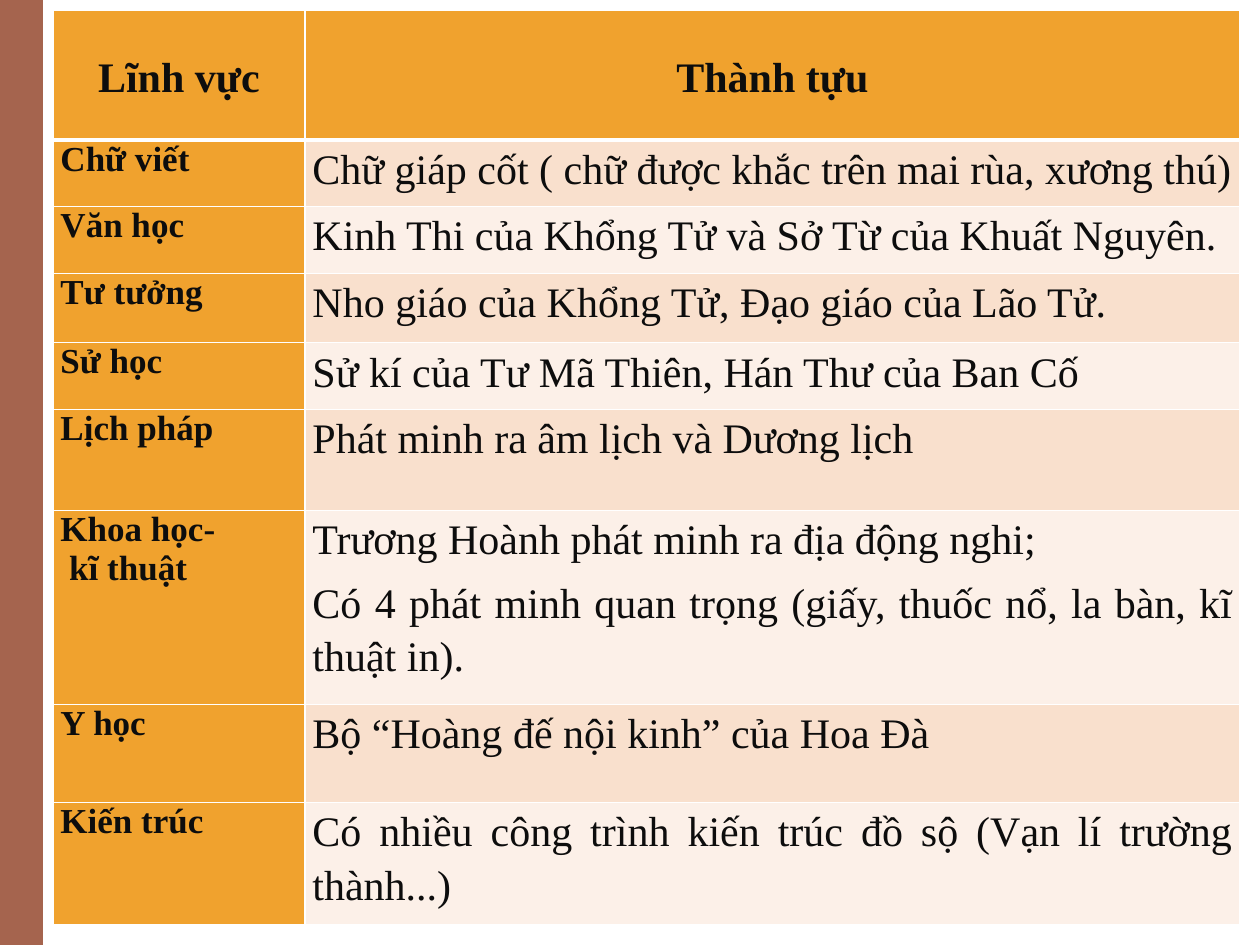
from dataclasses import dataclass

from lxml.etree import SubElement
from pptx import Presentation
from pptx.dml.color import RGBColor
from pptx.enum.shapes import MSO_SHAPE
from pptx.enum.text import MSO_ANCHOR, PP_ALIGN
from pptx.oxml.ns import qn
from pptx.util import Inches, Pt


@dataclass(frozen=True)
class Theme:
    """Colours, font and type sizes of the slide."""
    font: str = "Times New Roman"
    text: str = "0D0D0D"
    side: str = "A5644E"
    accent: str = "F0A22E"
    bands: tuple = ("F9E0CD", "FCF0E8")
    line: str = "FFFFFF"
    large: int = 24
    label: int = 20


THEME = Theme()
HEADER = ("Lĩnh vực", "Thành tựu")
FIELDS = [
    ("Chữ viết", "Chữ giáp cốt ( chữ được khắc trên mai rùa, xương thú)"),
    ("Văn học", "Kinh Thi của Khổng Tử và Sở Từ của Khuất Nguyên."),
    ("Tư tưởng", "Nho giáo của Khổng Tử, Đạo giáo của Lão Tử."),
    ("Sử học", "Sử kí của Tư Mã Thiên, Hán Thư của Ban Cố"),
    ("Lịch pháp", "Phát minh ra âm lịch và Dương lịch"),
    ("Khoa học-\n kĩ thuật",
     "Trương Hoành phát minh ra địa động nghi;\n"
     "Có 4 phát minh quan trọng (giấy, thuốc nổ, la bàn, kĩ thuật in)."),
    ("Y học", "Bộ “Hoàng đế nội kinh” của Hoa Đà"),
    ("Kiến trúc", "Có nhiều công trình kiến trúc đồ sộ (Vạn lí trường thành...)"),
]
COL_WIDTHS = (2, 7.42)
ROW_HEIGHTS = (1.03, 0.53, 0.53, 0.55, 0.53, 0.8, 1.54, 0.78, 0.97)


def add_side_bar(slide):
    """Draw the full-height bar at the left edge."""
    bar = slide.shapes.add_shape(MSO_SHAPE.RECTANGLE, 0, 0, Inches(0.34), Inches(7.5))
    bar.shadow.inherit = False
    bar.fill.solid()
    bar.fill.fore_color.rgb = RGBColor.from_string(THEME.side)
    bar.line.fill.background()


def set_borders(cell, top=1, bottom=1):
    """Give a cell solid borders, with widths in points."""
    tc_pr = cell._tc.get_or_add_tcPr()
    for side, width in (("L", 1), ("R", 1), ("T", top), ("B", bottom)):
        ln = SubElement(tc_pr, qn(f"a:ln{side}"), w=str(Pt(width)))
        fill = SubElement(ln, qn("a:solidFill"))
        SubElement(fill, qn("a:srgbClr"), val=THEME.line)


def format_cell(cell, text, fill, size, bold, align, spaced):
    """Fill a cell and set its text."""
    cell.fill.solid()
    cell.fill.fore_color.rgb = RGBColor.from_string(fill)
    cell.margin_left = cell.margin_right = Inches(0.06)
    cell.margin_top = cell.margin_bottom = 0
    cell.text_frame.text = text
    for p in cell.text_frame.paragraphs:
        p.alignment = align
        if spaced:
            p.line_spacing = 1.15
            p.space_after = Pt(6)
        for r in p.runs:
            r.font.name = THEME.font
            r.font.size = Pt(size)
            r.font.bold = bold
            r.font.color.rgb = RGBColor.from_string(THEME.text)


def add_header(table):
    """Write the header row."""
    for cell, text in zip(table.rows[0].cells, HEADER):
        set_borders(cell, bottom=3)
        format_cell(cell, text, THEME.accent, THEME.large, True, PP_ALIGN.CENTER, True)
        cell.vertical_anchor = MSO_ANCHOR.MIDDLE


def add_field(table, row, label, achievement):
    """Write one field and its achievements."""
    name, detail = table.rows[row].cells
    for cell in (name, detail):
        set_borders(cell, top=3 if row == 1 else 1)
    band = THEME.bands[(row - 1) % 2]
    format_cell(name, label, THEME.accent, THEME.label, True, PP_ALIGN.JUSTIFY, False)
    format_cell(detail, achievement, band, THEME.large, False, PP_ALIGN.JUSTIFY, True)


def add_achievements(slide):
    """Build the table of fields and achievements."""
    table = slide.shapes.add_table(
        len(ROW_HEIGHTS), len(COL_WIDTHS), Inches(0.42), Inches(0.08),
        Inches(sum(COL_WIDTHS)), Inches(sum(ROW_HEIGHTS))).table
    for column, width in zip(table.columns, COL_WIDTHS):
        column.width = Inches(width)
    for row, height in zip(table.rows, ROW_HEIGHTS):
        row.height = Inches(height)
    add_header(table)
    for row, (label, achievement) in enumerate(FIELDS, start=1):
        add_field(table, row, label, achievement)


def main():
    """Build and save the slide."""
    prs = Presentation()
    prs.slide_width, prs.slide_height = Inches(10), Inches(7.5)
    slide = prs.slides.add_slide(prs.slide_layouts[6])
    add_side_bar(slide)
    add_achievements(slide)
    prs.save("out.pptx")


if __name__ == "__main__":
    main()
